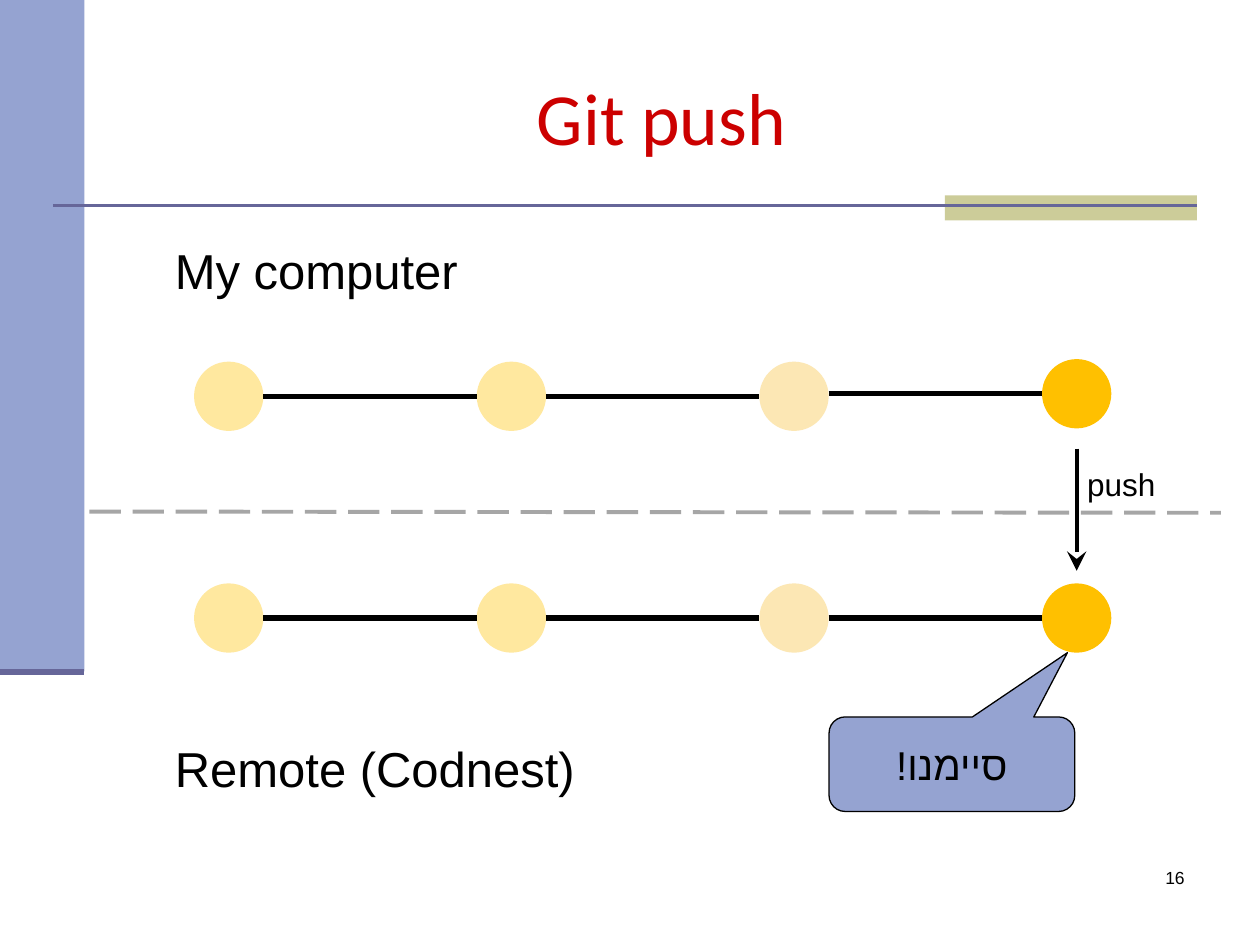
from dataclasses import dataclass

from lxml import etree
from pptx import Presentation
from pptx import util as u
from pptx.dml.color import RGBColor
from pptx.enum import dml, shapes, text
from pptx.oxml.ns import qn

COLUMNS, ROWS = 10, 7.5  # square grid cells across and down the slide
CELL = u.Inches(1)

BLACK, RED, PERIWINKLE = "000000", "CC0000", "95A3D1"
INDIGO, OLIVE, GREY = "666699", "CCCC99", "A6A6A6"
COMMIT_COLOURS = ("FFE89F", "FFE89F", "FCE7B4", "FFC000")

DOT = 0.55
FIRST_DOT, LAST_DOT = 1.54, 8.27
DOT_STEP = (LAST_DOT - FIRST_DOT) / (len(COMMIT_COLOURS) - 1)
LAST_DOT_CENTRE = LAST_DOT + DOT / 2


@dataclass(frozen=True)
class Box:
    column: float
    row: float
    width: float
    height: float

    def lengths(self) -> list[int]:
        return [cells(n) for n in (self.column, self.row, self.width, self.height)]


@dataclass(frozen=True)
class Label:
    words: str
    box: Box
    size: float
    colour: str = BLACK
    font: str = "Arial"
    align: text.PP_ALIGN = text.PP_ALIGN.LEFT
    anchor: text.MSO_ANCHOR = text.MSO_ANCHOR.TOP
    right_to_left: bool = False


@dataclass(frozen=True)
class History:
    """A row of commits; last_lift raises the newest one slightly."""
    row: float
    last_lift: float = 0


LABELS = (
    Label("Git push", Box(1, 0.3, 8.5, 1.25), 42, RED, "Calibri",
          text.PP_ALIGN.CENTER, text.MSO_ANCHOR.MIDDLE),
    Label("My computer", Box(1.29, 1.86, 3.57, 0.45), 28),
    Label("Remote (Codnest)", Box(1.29, 5.81, 3.57, 0.45), 28),
    Label("push", Box(8.53, 3.64, 0.9, 0.4), 18),
    Label("16", Box(7.42, 6.83, 2.08, 0.5), 10, align=text.PP_ALIGN.RIGHT),
)
CALLOUT = Label("סיימנו!", Box(6.58, 5.69, 1.95, 0.75), 23,
                align=text.PP_ALIGN.CENTER, anchor=text.MSO_ANCHOR.MIDDLE,
                right_to_left=True)
HISTORIES = (History(2.87, 0.02), History(4.63))


def cells(count: float) -> int:
    return round(count * CELL)


def colour(value: str) -> RGBColor:
    return RGBColor.from_string(value)


def add_filled(slide, kind, box: Box, fill: str):
    shape = slide.shapes.add_shape(kind, *box.lengths())
    shape.shadow.inherit = False
    shape.fill.solid()
    shape.fill.fore_color.rgb = colour(fill)
    shape.line.fill.background()
    return shape


def add_line(slide, start: tuple, end: tuple, line_colour: str, width: float):
    connector = slide.shapes.add_connector(
        shapes.MSO_CONNECTOR.STRAIGHT, *map(cells, start + end))
    connector.line.color.rgb = colour(line_colour)
    connector.line.width = u.Pt(width)
    etree.SubElement(connector.line._get_or_add_ln().getparent(), qn("a:effectLst"))
    return connector


def write(shape, label: Label) -> None:
    frame = shape.text_frame
    frame.text = label.words
    frame.word_wrap = True
    frame.vertical_anchor = label.anchor
    paragraph = frame.paragraphs[0]
    paragraph.alignment = label.align
    font = paragraph.runs[0].font
    font.name, font.size = label.font, u.Pt(label.size)
    font.color.rgb = colour(label.colour)
    if label.right_to_left:
        paragraph._p.get_or_add_pPr().set("rtl", "1")
        etree.SubElement(font._element, qn("a:cs"), typeface=label.font)


def add_frame(slide) -> None:
    """Draw the side band and the rule under the title."""
    rectangle = shapes.MSO_SHAPE.RECTANGLE
    add_filled(slide, rectangle, Box(0, 0, 0.67, 5.33), PERIWINKLE)
    add_filled(slide, rectangle, Box(7.5, 1.55, 2, 0.2), OLIVE)
    add_line(slide, (0.42, 1.63), (9.5, 1.63), INDIGO, 1.5)
    add_line(slide, (0, 5.33), (0.67, 5.33), INDIGO, 3.5)


def add_history(slide, history: History) -> None:
    last = len(COMMIT_COLOURS) - 1
    for index, fill in enumerate(COMMIT_COLOURS):
        left = FIRST_DOT + index * DOT_STEP
        top = history.row - (history.last_lift if index == last else 0)
        add_filled(slide, shapes.MSO_SHAPE.OVAL, Box(left, top, DOT, DOT), fill)
        if index:
            middle = top + DOT / 2
            add_line(slide, (left - DOT_STEP + DOT, middle), (left, middle), BLACK, 3)


def add_push_arrow(slide) -> None:
    arrow = add_line(slide, (LAST_DOT_CENTRE, 3.56), (LAST_DOT_CENTRE, 4.53), BLACK, 2.25)
    etree.SubElement(arrow.line._get_or_add_ln(), qn("a:tailEnd"),
                     type="stealth", w="lg", len="lg")


def add_callout(slide) -> None:
    callout = add_filled(slide, shapes.MSO_SHAPE.ROUNDED_RECTANGULAR_CALLOUT,
                         CALLOUT.box, PERIWINKLE)
    for index, value in enumerate((0.47, -1.18, 0.17)):
        callout.adjustments[index] = value
    callout.line.color.rgb = colour(BLACK)
    callout.line.width = u.Pt(0.75)
    write(callout, CALLOUT)


def main() -> None:
    presentation = Presentation()
    presentation.slide_width = cells(COLUMNS)
    presentation.slide_height = cells(ROWS)
    slide = presentation.slides.add_slide(presentation.slide_layouts[6])

    add_frame(slide)
    divider = add_line(slide, (0.71, 4.06), (9.69, 4.07), GREY, 2.25)
    divider.line.dash_style = dml.MSO_LINE.LONG_DASH
    for history in HISTORIES:
        add_history(slide, history)
    add_push_arrow(slide)
    add_callout(slide)
    for label in LABELS:
        write(slide.shapes.add_textbox(*label.box.lengths()), label)

    presentation.save("out.pptx")


if __name__ == "__main__":
    main()
